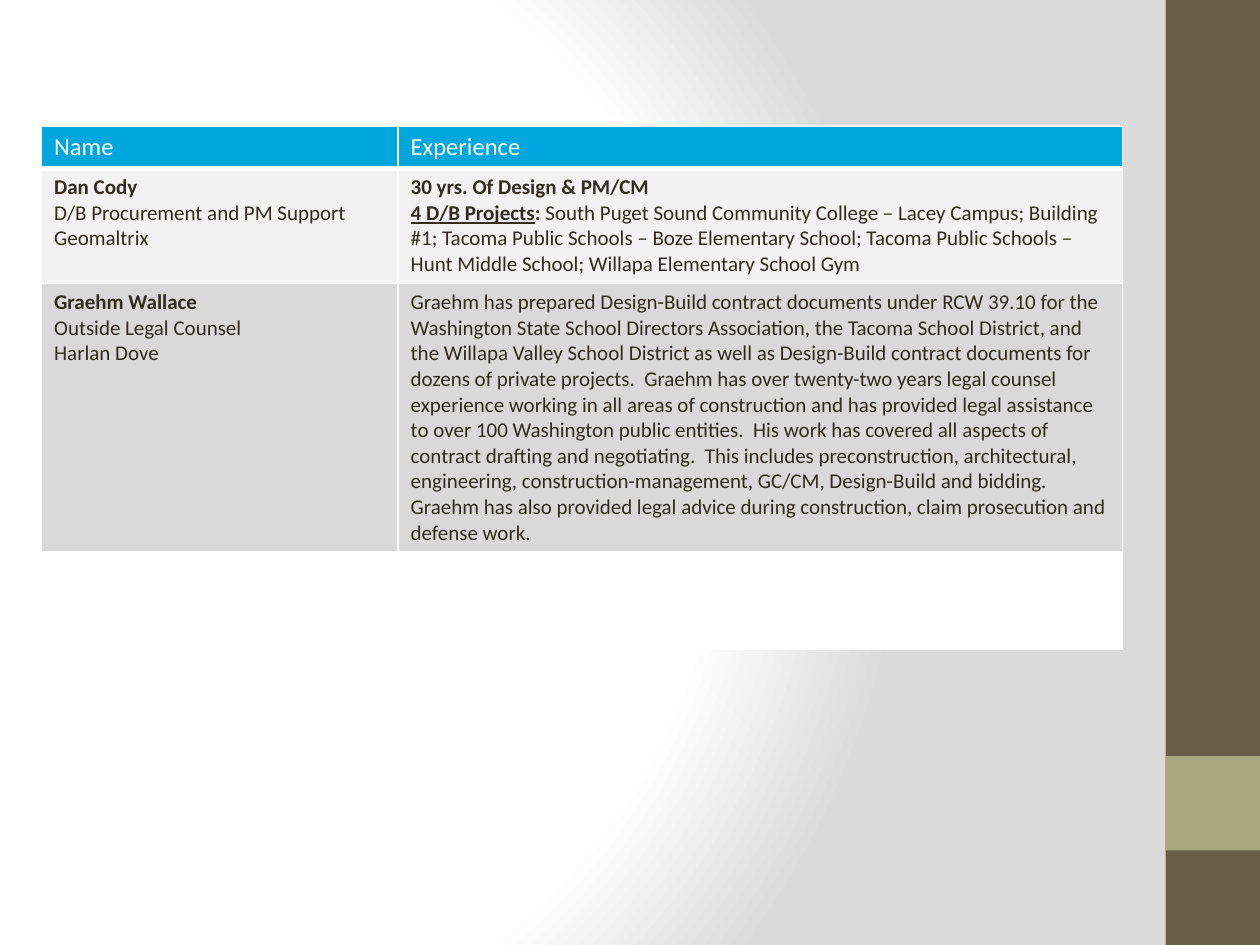
from dataclasses import dataclass

from pptx import Presentation
from pptx.dml.color import RGBColor
from pptx.enum.shapes import MSO_SHAPE
from pptx.oxml import parse_xml
from pptx.oxml.ns import nsdecls
from pptx.util import Inches, Pt

FONT, WHITE, INK = "Calibri", "FFFFFF", "2F2B20"
UNIT = 0.75  # sidebar width; the slide is a grid of such squares


@dataclass
class Span:
    text: str
    bold: bool = False
    underline: bool = False


@dataclass
class Row:
    height: float
    fill: str
    cells: tuple  # one list of paragraphs per column; a paragraph is a list of spans
    size: int = 12
    color: str = INK
    bottom: int = 1


COLUMNS = (2.83, 5.75)
ROWS = [
    Row(0.32, "00A6DE", ([[Span("Name")]], [[Span("Experience")]]), 14, WHITE, 3),
    Row(0.91, "F2F2F2", (
        [[Span("Dan Cody", True)],
         [Span("D/B Procurement and PM Support")],
         [Span("Geomaltrix")]],
        [[Span("30 yrs. Of Design & PM/CM", True)],
         [Span("4 D/B Projects", True, True), Span(": ", True),
          Span("South Puget Sound Community College – Lacey Campus; Building #1; "
               "Tacoma Public Schools – Boze Elementary School; Tacoma Public "
               "Schools – Hunt Middle School; Willapa Elementary School Gym")]])),
    Row(2.1, "D9D9D9", (
        [[Span("Graehm Wallace", True)],
         [Span("Outside Legal Counsel")],
         [Span("Harlan Dove")]],
        [[Span("Graehm has prepared Design-Build contract documents under RCW 39.10 "
               "for the Washington State School Directors Association, the Tacoma "
               "School District, and the Willapa Valley School District as well as "
               "Design-Build contract documents for dozens of private projects.  "
               "Graehm has over twenty-two years legal counsel experience working in "
               "all areas of construction and has provided legal assistance to over "
               "100 Washington public entities.  His work has covered all aspects of "
               "contract drafting and negotiating.  This includes preconstruction, "
               "architectural, engineering, construction-management, GC/CM, "
               "Design-Build and bidding.  Graehm has also provided legal advice "
               "during construction, claim prosecution and defense work.")]])),
    Row(0.77, WHITE, ([], [])),
]


def paint(fill, color: str) -> None:
    fill.solid()
    fill.fore_color.rgb = RGBColor.from_string(color)


def set_background(s) -> None:
    stops = "".join(f'<a:gs pos="{pos}000"><a:srgbClr val="{color}"/></a:gs>'
                    for pos, color in ((0, WHITE), (75, WHITE), (100, "DADADA")))
    s._element.cSld.insert(0, parse_xml(
        f'<p:bg {nsdecls("p", "a")}><p:bgPr><a:gradFill rotWithShape="1">'
        f'<a:gsLst>{stops}</a:gsLst><a:path path="circle">'
        '<a:fillToRect l="20000" t="50000" r="100000" b="50000"/></a:path>'
        '</a:gradFill><a:effectLst/></p:bgPr></p:bg>'))


def add_block(s, row: int, rows: int, color: str) -> None:
    """Fill some squares of the sidebar on the right."""
    sp = s.shapes.add_shape(MSO_SHAPE.RECTANGLE, Inches(10 - UNIT), Inches(row * UNIT),
                            Inches(UNIT), Inches(rows * UNIT))
    sp.shadow.inherit = False
    sp.line.fill.background()
    paint(sp.fill, color)


def set_borders(cell, top: int, bottom: int) -> None:
    tcPr = cell._tc.get_or_add_tcPr()
    sides = (("L", 1), ("R", 1), ("T", top), ("B", bottom))
    for i, (side, width) in enumerate(sides):
        tcPr.insert(i, parse_xml(
            f'<a:ln{side} {nsdecls("a")} w="{Pt(width)}"><a:solidFill>'
            f'<a:srgbClr val="{WHITE}"/></a:solidFill></a:ln{side}>'))


def write_cell(cell, paragraphs: list, size: int, color: str) -> None:
    tf = cell.text_frame
    for i, spans in enumerate(paragraphs):
        p = tf.add_paragraph() if i else tf.paragraphs[0]
        p.font.name, p.font.size = FONT, Pt(size)
        p.font.color.rgb = RGBColor.from_string(color)
        for span in spans:
            r = p.add_run()
            r.text = span.text
            r.font.bold = span.bold
            if span.underline:
                r.font.underline = True


def add_team_table(s) -> None:
    height = sum(row.height for row in ROWS)
    table = s.shapes.add_table(len(ROWS), len(COLUMNS), Inches(0.33), Inches(1),
                               Inches(sum(COLUMNS)), Inches(height)).table
    table.horz_banding = False
    for column, width in zip(table.columns, COLUMNS):
        column.width = Inches(width)
    top = 1
    for i, row in enumerate(ROWS):
        table.rows[i].height = Inches(row.height)
        for j, paragraphs in enumerate(row.cells):
            cell = table.cell(i, j)
            paint(cell.fill, row.fill)
            set_borders(cell, top, row.bottom)
            write_cell(cell, paragraphs, row.size, row.color)
        top = row.bottom


def main() -> None:
    prs = Presentation()
    prs.slide_width, prs.slide_height = Inches(10), Inches(7.5)
    s = prs.slides.add_slide(prs.slide_layouts[6])
    # Background and sidebar
    set_background(s)
    add_block(s, 0, 10, "675E47")
    add_block(s, 8, 1, "A9A57C")
    # Team members and their experience
    add_team_table(s)
    prs.save("out.pptx")


if __name__ == "__main__":
    main()
